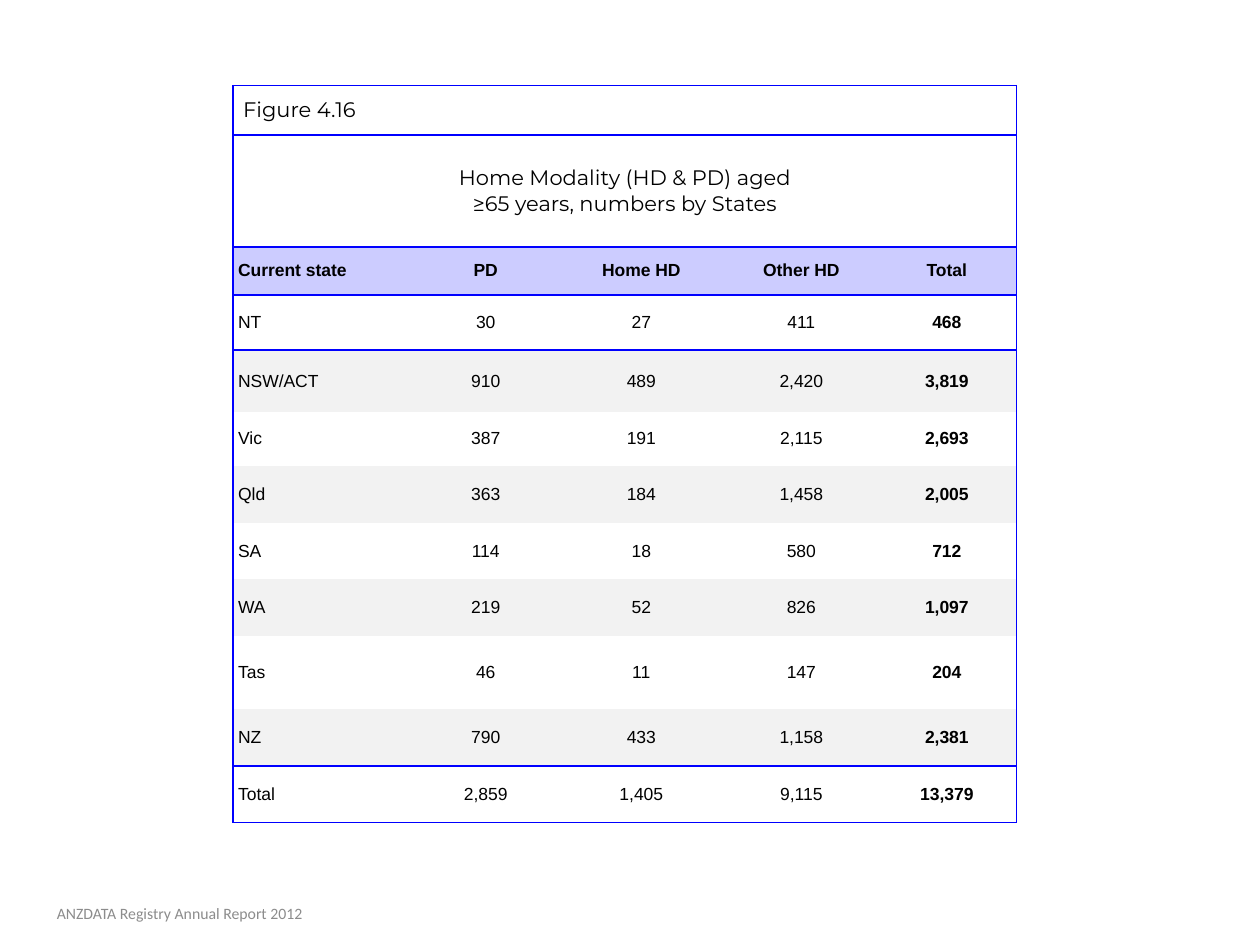
import pptx
import pptx.dml.color
import pptx.enum.text
import pptx.oxml
import pptx.oxml.ns
import pptx.util

COLORS = {"text": "000000", "footer": "8C8C8C", "rule": "0000FF",
          "header": "CCCCFF", "band": "F2F2F2"}
GRID_COLUMNS, GRID_ROWS = 1000, 750
PLAIN_TABLE = "{2D5ABB26-0587-4C30-8999-92F81FD0307C}"
LEFT = pptx.enum.text.PP_ALIGN.LEFT
CENTER = pptx.enum.text.PP_ALIGN.CENTER

HEADINGS = ["Current state", "PD", "Home HD", "Other HD", "Total"]
STATES = [
    ["NT", "30", "27", "411", "468"],
    ["NSW/ACT", "910", "489", "2,420", "3,819"],
    ["Vic", "387", "191", "2,115", "2,693"],
    ["Qld", "363", "184", "1,458", "2,005"],
    ["SA", "114", "18", "580", "712"],
    ["WA", "219", "52", "826", "1,097"],
    ["Tas", "46", "11", "147", "204"],
    ["NZ", "790", "433", "1,158", "2,381"],
    ["Total", "2,859", "1,405", "9,115", "13,379"],
]
COLUMN_WIDTHS = [144, 113, 134, 120, 111]
ROW_HEIGHTS = [39, 89, 38, 44, 49, 43, 45, 45, 45, 58, 45, 45]


class ReportSlide:
    def __init__(self, presentation):
        self.width = presentation.slide_width
        self.height = presentation.slide_height
        self.slide = presentation.slides.add_slide(presentation.slide_layouts[6])

    def across(self, columns):
        return round(self.width * columns / GRID_COLUMNS)

    def down(self, rows):
        return round(self.height * rows / GRID_ROWS)

    def box(self, left, top, width, height):
        return self.across(left), self.down(top), self.across(width), self.down(height)

    def add_lines(self, frame, lines, font, size, color="text", bold=False,
                  align=CENTER, space_after=None):
        frame.word_wrap = True
        for index, line in enumerate(lines):
            paragraph = frame.add_paragraph() if index else frame.paragraphs[0]
            paragraph.alignment = align
            if space_after:
                paragraph.space_after = pptx.util.Pt(space_after)
            run = paragraph.add_run()
            run.text = line
            run.font.name = font
            run.font.size = pptx.util.Pt(size)
            run.font.bold = bold
            run.font.color.rgb = pptx.dml.color.RGBColor.from_string(COLORS[color])

    def text(self, place, line, font, size, color):
        shape = self.slide.shapes.add_textbox(*self.box(*place))
        shape.text_frame.vertical_anchor = pptx.enum.text.MSO_ANCHOR.MIDDLE
        self.add_lines(shape.text_frame, [line], font, size, color)

    def table(self, left, top, widths, heights):
        frame = self.slide.shapes.add_table(
            len(heights), len(widths), *self.box(left, top, sum(widths), sum(heights)))
        table = frame.table
        table.first_row = table.horz_banding = False
        frame._element.find(".//" + pptx.oxml.ns.qn("a:tableStyleId")).text = PLAIN_TABLE
        for column, width in zip(table.columns, widths):
            column.width = self.across(width)
        for row, height in zip(table.rows, heights):
            row.height = self.down(height)
        return table

    def cell(self, cell, lines, edges, fill=None, margins=(4, 4), **style):
        cell.vertical_anchor = pptx.enum.text.MSO_ANCHOR.MIDDLE
        cell.margin_left = cell.margin_right = self.across(margins[0])
        cell.margin_top = cell.margin_bottom = self.down(margins[1])
        self.add_lines(cell.text_frame, lines, **style)
        properties = cell._tc.get_or_add_tcPr()
        for edge in edges:
            properties.append(pptx.oxml.parse_xml(
                f'<a:ln{edge} {pptx.oxml.ns.nsdecls("a")} w="{pptx.util.Pt(1)}">'
                f'<a:solidFill><a:srgbClr val="{COLORS["rule"]}"/></a:solidFill>'
                f'</a:ln{edge}>'))
        if fill:
            cell.fill.solid()
            cell.fill.fore_color.rgb = pptx.dml.color.RGBColor.from_string(COLORS[fill])
        else:
            cell.fill.background()

    def banner(self, table, row, lines, **style):
        last = len(table.columns) - 1
        table.cell(row, 0).merge(table.cell(row, last))
        for column in range(last + 1):
            self.cell(table.cell(row, column), [] if column else lines, "LRTB",
                      font="Montserrat", size=12, **style)

    def record(self, table, row, values, ruled, fill, heading=False):
        last = len(values) - 1
        for column, value in enumerate(values):
            edges = "L" * (column == 0) + "R" * (column == last) + ruled
            self.cell(table.cell(row, column), [value], edges, fill,
                      font="Arial", size=10, bold=heading or column == last,
                      align=CENTER if column else LEFT, space_after=14)


def main():
    presentation = pptx.Presentation()
    presentation.slide_width = pptx.util.Inches(10)
    presentation.slide_height = pptx.util.Inches(7.5)
    report = ReportSlide(presentation)
    report.text((-4, 705, 293, 40), "ANZDATA Registry Annual Report 2012",
                "Calibri", 9, "footer")

    table = report.table(185, 68, COLUMN_WIDTHS, ROW_HEIGHTS)
    report.banner(table, 0, ["Figure 4.16"], align=LEFT, margins=(8, 0))
    report.banner(table, 1, ["Home Modality (HD & PD) aged",
                             "≥65 years, numbers by States"])
    report.record(table, 2, HEADINGS, "TB", "header", heading=True)
    rules = {"NT": "T", "NZ": "B", "Total": "TB"}
    for index, values in enumerate(STATES):
        report.record(table, index + 3, values, rules.get(values[0], ""),
                      "band" if index % 2 else None)
    presentation.save("out.pptx")


if __name__ == "__main__":
    main()
